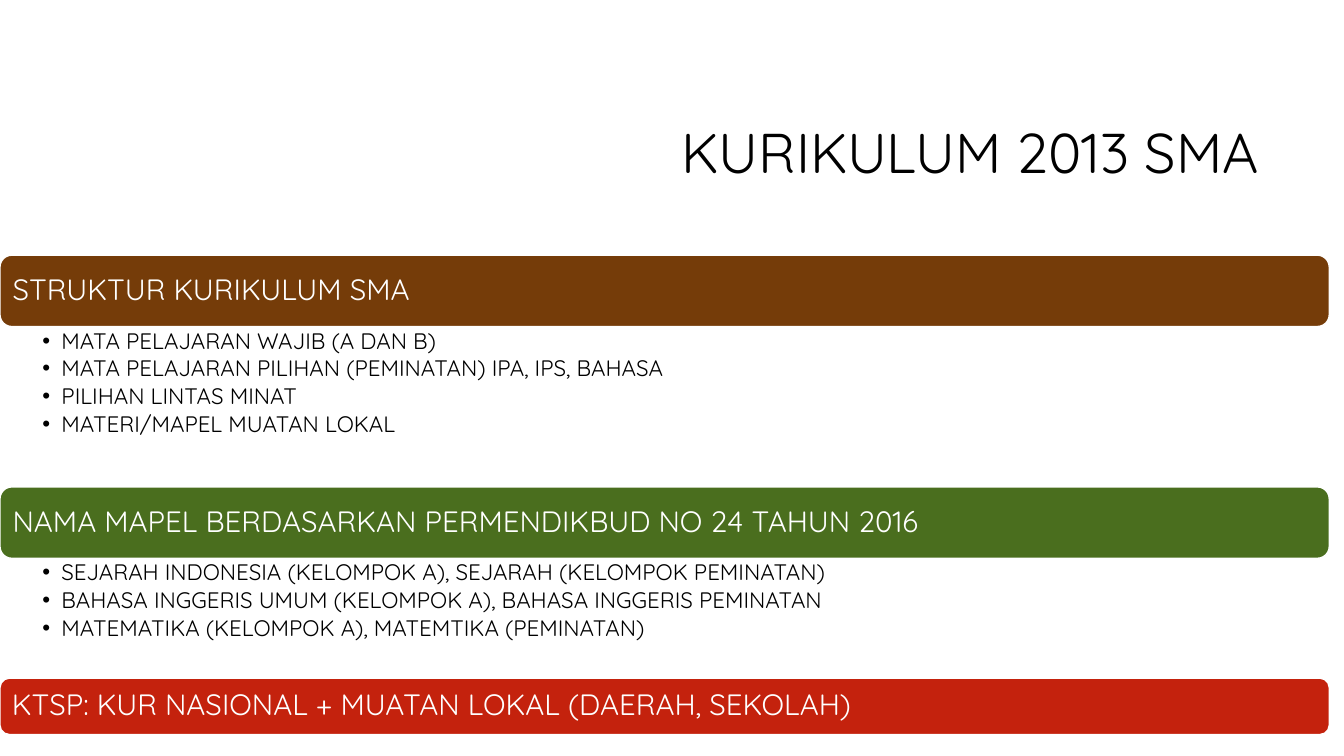
from lxml.etree import SubElement as Sub
from pptx import Presentation
from pptx.dml.color import RGBColor
from pptx.enum.shapes import MSO_SHAPE as Shape
from pptx.enum.text import MSO_ANCHOR as Anchor, MSO_AUTO_SIZE as Fit, PP_ALIGN as Align
from pptx.oxml.ns import qn
from pptx.util import Cm, Pt

BLACK = RGBColor(0, 0, 0)
WHITE = RGBColor(0xFF, 0xFF, 0xFF)
BROWN = RGBColor(0x75, 0x3C, 0x09)
GREEN = RGBColor(0x4A, 0x6E, 0x1E)
RED = RGBColor(0xC4, 0x22, 0x0D)

FONT = "Quicksand"
WIDTH = 33.5

# Heading, bar colour, bar height, list height, list items
PARTS = [
    ("STRUKTUR KURIKULUM SMA", BROWN, 1.8, 4.04, [
        "MATA PELAJARAN WAJIB (A DAN B)",
        "MATA PELAJARAN PILIHAN (PEMINATAN) IPA, IPS, BAHASA",
        "PILIHAN LINTAS MINAT",
        "MATERI/MAPEL MUATAN LOKAL",
    ]),
    ("NAMA MAPEL BERDASARKAN PERMENDIKBUD NO 24 TAHUN 2016", GREEN, 1.8, 3.02, [
        "SEJARAH INDONESIA (KELOMPOK A), SEJARAH (KELOMPOK PEMINATAN)",
        "BAHASA INGGERIS UMUM (KELOMPOK A), BAHASA INGGERIS PEMINATAN",
        "MATEMATIKA (KELOMPOK A), MATEMTIKA (PEMINATAN)",
    ]),
    ("KTSP: KUR NASIONAL + MUATAN LOKAL (DAERAH, SEKOLAH)", RED, 1.42, 0, []),
]


def apply(item, form):
    for key, value in form.items():
        setattr(item, key, value)


class Deck:
    def __init__(self, slide, font):
        self.slide = slide
        self.font = font

    def line(self, para, text, size, color, **form):
        apply(para, {"line_spacing": 0.9, **form})
        run = para.add_run()
        run.text = text
        apply(run.font, {"name": self.font, "size": Pt(size)})
        run.font.color.rgb = color

    def title(self, text, left, top, width, height):
        head = self.slide.shapes.title
        apply(head, {"left": Cm(left), "top": Cm(top),
                     "width": Cm(width), "height": Cm(height)})
        frame = head.text_frame
        apply(frame, {"word_wrap": True, "auto_size": Fit.NONE,
                      "vertical_anchor": Anchor.MIDDLE})
        self.line(frame.paragraphs[0], text, 40, BLACK, alignment=Align.RIGHT)

    def bar(self, text, color, top, height):
        bar = self.slide.shapes.add_shape(
            Shape.ROUNDED_RECTANGLE, 0, Cm(top), Cm(WIDTH), Cm(height))
        bar.shadow.inherit = False
        bar.fill.solid()
        bar.fill.fore_color.rgb = color
        bar.line.color.rgb = WHITE
        bar.line.width = Pt(1)
        pad = Cm(0.23)
        frame = bar.text_frame
        apply(frame, {"word_wrap": True, "vertical_anchor": Anchor.MIDDLE,
                      "margin_left": pad, "margin_right": pad,
                      "margin_top": pad, "margin_bottom": pad})
        self.line(frame.paragraphs[0], text, 21, WHITE, alignment=Align.LEFT)

    def bullets(self, items, top, height):
        box = self.slide.shapes.add_textbox(0, Cm(top), Cm(WIDTH), Cm(height))
        frame = box.text_frame
        apply(frame, {"word_wrap": True, "vertical_anchor": Anchor.TOP,
                      "margin_left": Cm(1.07), "margin_right": Cm(0.41),
                      "margin_top": Cm(0.08), "margin_bottom": Cm(0.08)})
        for i, text in enumerate(items):
            para = frame.add_paragraph() if i else frame.paragraphs[0]
            props = para._p.get_or_add_pPr()
            props.set("marL", str(Cm(0.48)))
            props.set("indent", str(-Cm(0.48)))
            Sub(props, qn("a:buFont"), typeface="Arial")
            Sub(props, qn("a:buChar"), char="•")
            self.line(para, text, 16, BLACK, level=1, space_after=Pt(2.5))


def main():
    show = Presentation()
    apply(show, {"slide_width": Cm(33.87), "slide_height": Cm(19.05)})
    deck = Deck(show.slides.add_slide(show.slide_layouts[5]), FONT)

    # Title
    deck.title("KURIKULUM 2013 SMA", 8.05, 2.13, 23.93, 3.58)

    # Bars and lists, stacked without gaps
    top = 6.43
    for text, color, tall, deep, items in PARTS:
        deck.bar(text, color, top, tall)
        top += tall
        if items:
            deck.bullets(items, top, deep)
            top += deep

    show.save("out.pptx")


if __name__ == "__main__":
    main()
